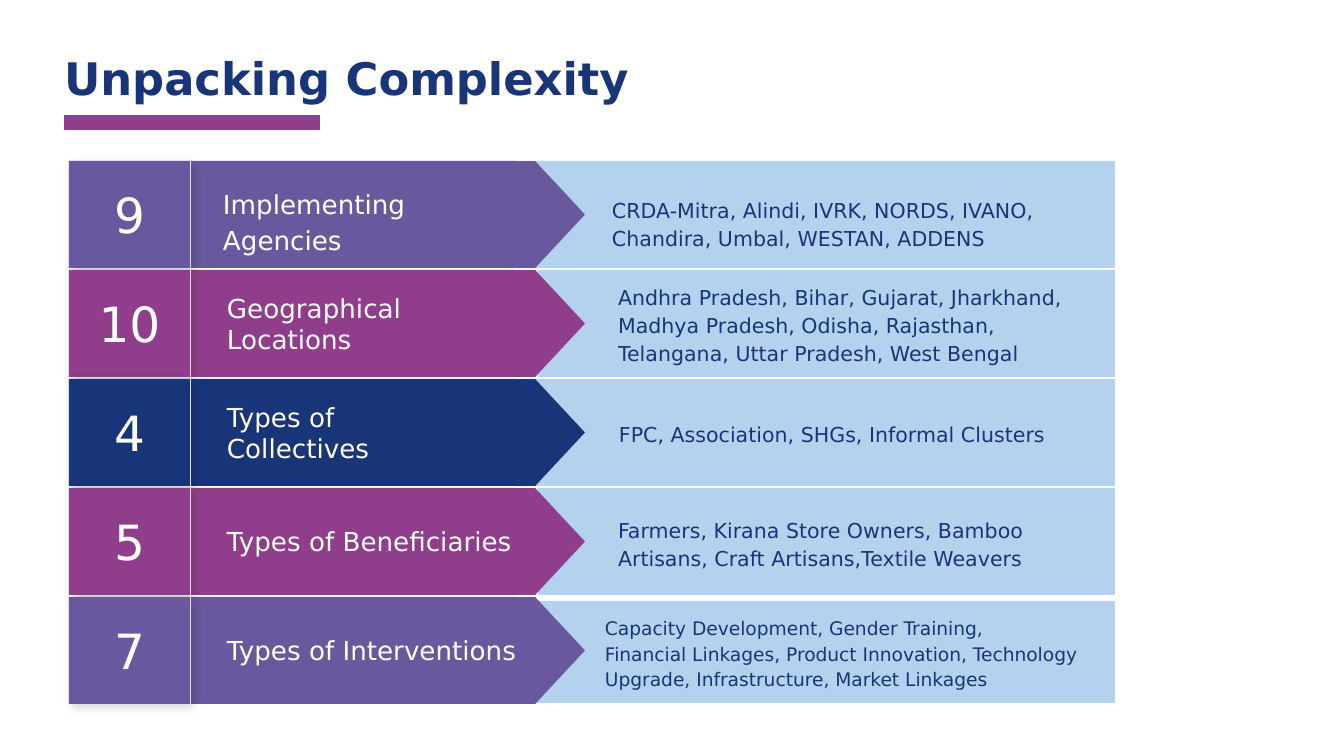
from dataclasses import dataclass

from lxml import etree
from pptx import Presentation
from pptx.dml.color import RGBColor
from pptx.enum.shapes import MSO_SHAPE as SHAPE
from pptx.enum.text import MSO_ANCHOR as ANCHOR, MSO_AUTO_SIZE as AUTO, PP_ALIGN as ALIGN
from pptx.oxml.ns import qn
from pptx.util import Pt

PX = 914400 / 134.4


@dataclass(frozen=True)
class Theme:
    font: str = "DejaVu Sans"
    navy: str = "193579"
    plum: str = "903E8B"
    violet: str = "6A589F"
    sky: str = "B4D2EE"
    white: str = "FFFFFF"
    title: int = 24
    number: int = 26
    label: int = 14
    body: int = 11
    small: int = 10


T = Theme()


@dataclass(frozen=True)
class Row:
    number: str
    label: tuple
    detail: tuple
    color: str
    size: int = T.body
    panel_x: int = 469      # panel left edge, from the row's left
    indent: int = 67        # text indent inside the panel
    panel_y: int = 0
    panel_h: int = 107
    drop: int = 0           # how far the detail text sits below centre
    label_y: int = 6
    label_pad: int = 13
    label_spacing: float = 1.0
    label_anchor: ANCHOR = ANCHOR.MIDDLE


ROWS = [
    Row("9", ("Implementing", "Agencies"),
        ("CRDA-Mitra, Alindi, IVRK, NORDS, IVANO, Chandira, Umbal, WESTAN, ADDENS",),
        T.violet, panel_x=333, indent=197, drop=8,
        label_y=14, label_pad=9, label_spacing=1.15, label_anchor=ANCHOR.TOP),
    Row("10", ("Geographical Locations",),
        ("Andhra Pradesh, Bihar, Gujarat, Jharkhand, Madhya Pradesh, Odisha, "
         "Rajasthan, Telangana, Uttar Pradesh, West Bengal",), T.plum),
    Row("4", ("Types of", "Collectives"),
        ("FPC, Association, SHGs, Informal Clusters",),
        T.navy, panel_x=456, indent=81),
    Row("5", ("Types of Beneficiaries",),
        ("Farmers, Kirana Store Owners, Bamboo Artisans, Craft Artisans,Textile Weavers",),
        T.plum, drop=1),
    Row("7", ("Types of Interventions",),
        ("Capacity Development, Gender Training,",
         "Financial Linkages, Product Innovation, Technology Upgrade, "
         "Infrastructure, Market Linkages"),
        T.violet, size=T.small, panel_x=456, panel_y=4, panel_h=102),
]


def px(n):
    return round(n * PX)


def write(sp, lines, size, color, bold=False, align=ALIGN.LEFT, anchor=ANCHOR.MIDDLE,
          spacing=1.0, pad=13, drop=0, indent=0):
    """Put one paragraph per line into a shape."""
    tf = sp.text_frame
    tf.word_wrap, tf.auto_size, tf.vertical_anchor = True, AUTO.NONE, anchor
    tf.margin_left = tf.margin_right = tf.margin_bottom = px(pad)
    tf.margin_top = px(pad + 2 * drop)
    for i, line in enumerate(lines):
        p = tf.paragraphs[0] if i == 0 else tf.add_paragraph()
        p.alignment, p.line_spacing = align, spacing
        if indent:
            p._p.get_or_add_pPr().set("marL", str(px(indent)))
        r = p.add_run()
        r.text = line
        r.font.name, r.font.size, r.font.bold = T.font, Pt(size), bold
        r.font.color.rgb = RGBColor.from_string(color)


def block(s, kind, x, y, w, h, color):
    sp = s.shapes.add_shape(kind, px(x), px(y), px(w), px(h))
    sp.shadow.inherit = False
    sp.fill.solid()
    sp.fill.fore_color.rgb = RGBColor.from_string(color)
    sp.line.fill.background()
    return sp


def cast_shadow(sp):
    effects = sp._element.spPr.find(qn("a:effectLst"))
    shadow = etree.SubElement(effects, qn("a:outerShdw"), blurRad=str(Pt(5.6)),
                              dist=str(Pt(2.2)), dir="2700000", rotWithShape="0")
    color = etree.SubElement(shadow, qn("a:srgbClr"), val="000000")
    etree.SubElement(color, qn("a:alpha"), val="16000")


def add_heading(s, x, y, w):
    title = s.shapes.title
    title.left, title.top, title.width, title.height = px(x), px(y), px(w), px(54)
    write(title, ["Unpacking Complexity"], T.title, T.navy, bold=True,
          anchor=ANCHOR.TOP, spacing=1.2, pad=0)
    block(s, SHAPE.FLOWCHART_PROCESS, x, y + 75, 256, 15, T.plum)


def add_row(s, row, x, y, w, h):
    # Detail panel, reaching the row's right edge
    panel = block(s, SHAPE.RECTANGLE, x + row.panel_x, y + row.panel_y,
                  w - row.panel_x, row.panel_h, T.sky)
    write(panel, row.detail, row.size, T.navy, spacing=1.15,
          indent=row.indent, drop=row.drop)

    # Arrow: a tall pentagon turned on its side, then the band over its tail
    length, tip = 249, 516
    arrow = block(s, SHAPE.FLOWCHART_OFFPAGE_CONNECTOR, x + tip - (length + h) / 2,
                  y + (h - length) / 2, h, length, row.color)
    arrow.rotation = 270
    block(s, SHAPE.RECTANGLE, x + 122, y, 324, h, row.color)

    # Number tile
    tile = block(s, SHAPE.RECTANGLE, x, y, 121, h, row.color)
    cast_shadow(tile)
    write(tile, [row.number], T.number, T.white, align=ALIGN.CENTER)

    # Label
    label = s.shapes.add_textbox(px(x + 145), px(y + row.label_y), px(324), px(95))
    write(label, row.label, T.label, T.white, anchor=row.label_anchor,
          spacing=row.label_spacing, pad=row.label_pad)


def main():
    prs = Presentation()
    prs.slide_width, prs.slide_height = px(1344), px(756)
    s = prs.slides.add_slide(prs.slide_layouts[5])
    add_heading(s, 64, 40, 775)
    for i, row in enumerate(ROWS):
        add_row(s, row, 69, 161 + 109 * i, 1046, 107)
    prs.save("out.pptx")


if __name__ == "__main__":
    main()
